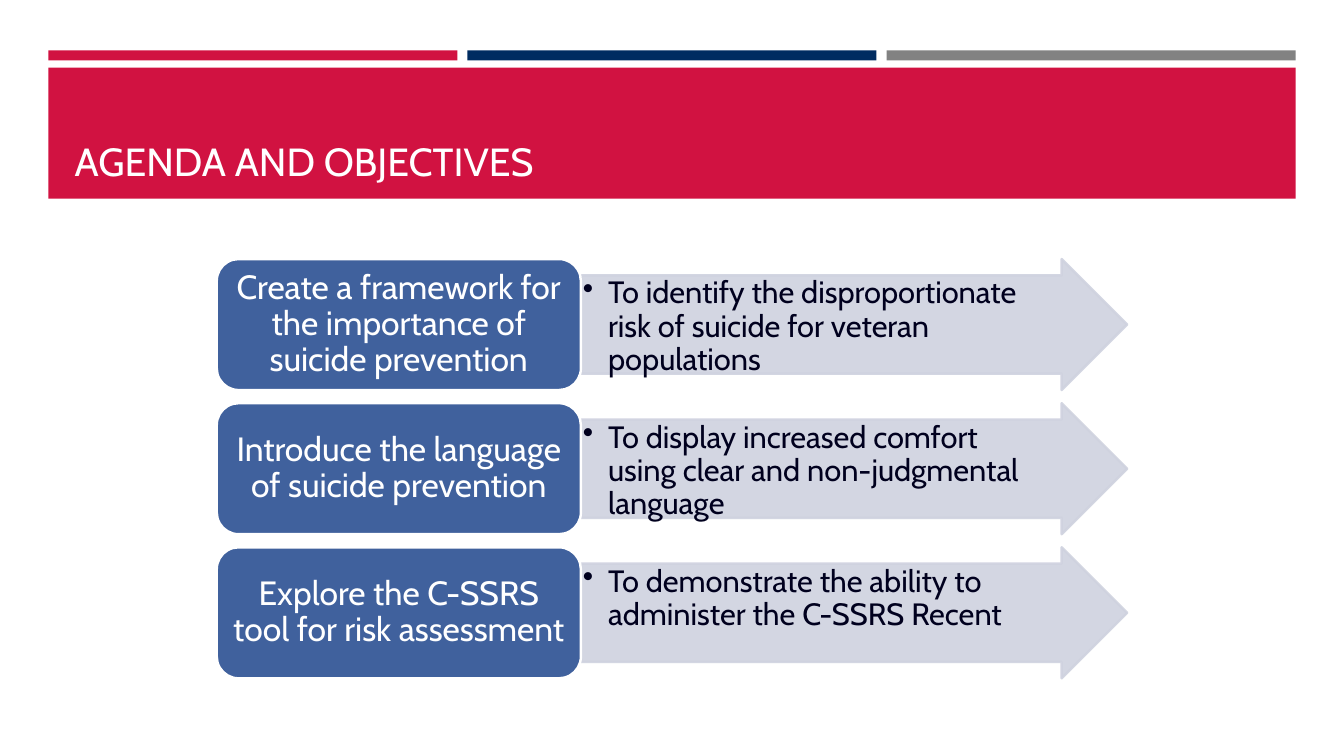
import pptx
import pptx.util
import pptx.dml.color
import pptx.enum.shapes
import pptx.enum.text
import pptx.oxml
import pptx.oxml.ns

Inches = pptx.util.Inches
SHAPE = pptx.enum.shapes.MSO_SHAPE
ANCHOR = pptx.enum.text.MSO_ANCHOR
ALIGN = pptx.enum.text.PP_ALIGN
RED, NAVY, GRAY = "D11241", "002C61", "828282"
WHITE, BLUE, PALE, INK = "FFFFFF", "40619D", "CFD2DF", "00001E"
AGENDA = [
    ("Create a framework for the importance of suicide prevention",
     "To identify the disproportionate risk of suicide for veteran populations"),
    ("Introduce the language of suicide prevention",
     "To display increased comfort using clear and non-judgmental language"),
    ("Explore the C-SSRS tool for risk assessment",
     "To demonstrate the ability to administer the C-SSRS Recent"),
]


def color(value):
    """Turn a hex string into a colour."""
    return pptx.dml.color.RGBColor.from_string(value)


def element(tag, **attributes):
    """Make a DrawingML element."""
    node = pptx.oxml.parse_xml(f"<a:{tag} {pptx.oxml.ns.nsdecls('a')}/>")
    for name, value in attributes.items():
        node.set(name, value)
    return node


def add_block(page, kind, left, top, width, height, fill, line=None):
    """Add a filled preset shape, outlined when a line colour is given."""
    shape = page.shapes.add_shape(
        kind, Inches(left), Inches(top), Inches(width), Inches(height))
    shape.shadow.inherit = False
    shape.fill.solid()
    shape.fill.fore_color.rgb = color(fill)
    if line:
        shape.line.color.rgb = color(line)
        shape.line.width = pptx.util.Pt(1.75)
    else:
        shape.line.fill.background()
    return shape


def write(shape, text, size, ink, anchor, align):
    """Put one formatted paragraph into a shape and return it."""
    frame = shape.text_frame
    frame.text = text
    frame.word_wrap = True
    frame.vertical_anchor = anchor
    para = frame.paragraphs[0]
    para.alignment = align
    for span in para.runs:
        span.font.name = "Cabin"
        span.font.size = pptx.util.Pt(size)
        span.font.color.rgb = color(ink)
    return para


def add_header(page, left, top, width):
    """Draw the three bars, the red band and the title on it."""
    gap = 0.1
    bar = (width - 2 * gap) / 3
    for index, fill in enumerate((RED, NAVY, GRAY)):
        add_block(page, SHAPE.RECTANGLE, left + index * (bar + gap), top,
                  bar, 0.1, fill)
    add_block(page, SHAPE.RECTANGLE, left, top + 0.17, width, 1.3, RED)
    title = page.shapes.title
    title.left, title.top = Inches(left + 0.16), Inches(top + 0.27)
    title.width, title.height = Inches(12.06), Inches(1.11)
    write(title, "AGENDA AND OBJECTIVES", 28, WHITE, ANCHOR.BOTTOM, ALIGN.LEFT)
    title.element.getparent().append(title.element)


def add_objective(page, left, top, width, height, text):
    """Draw a translucent arrow holding one bulleted objective."""
    arrow = add_block(page, SHAPE.RIGHT_ARROW, left, top, width, height, PALE, PALE)
    arrow.adjustments[0] = 0.75
    arrow.adjustments[1] = 0.5
    for tint in arrow.element.spPr.iter(pptx.oxml.ns.qn("a:srgbClr")):
        tint.append(element("alpha", val="90000"))
    para = write(arrow, text, 22, INK, ANCHOR.TOP, ALIGN.LEFT)
    para.line_spacing = 0.9
    frame = arrow.text_frame
    frame.margin_left = frame.margin_top = frame.margin_bottom = Inches(0.02)
    frame.margin_right = Inches(0.35)
    properties = para.runs[0].font and para.alignment is not None and para._p.get_or_add_pPr()
    properties.set("marL", str(Inches(0.25)))
    properties.set("indent", str(Inches(-0.25)))
    properties.append(element("buChar", char="•"))


def add_agenda(page, left, top, width, height):
    """Stack the agenda rows, each a label followed by its arrow."""
    pitch = 1.43
    row = height - pitch * (len(AGENDA) - 1)
    label_width = width * 0.4
    for index, (topic, objective) in enumerate(AGENDA):
        row_top = top + index * pitch
        add_objective(page, left + label_width, row_top, width - label_width,
                      row, objective)
        label = add_block(page, SHAPE.ROUNDED_RECTANGLE, left, row_top,
                          label_width, row, BLUE, WHITE)
        para = write(label, topic, 24, WHITE, ANCHOR.MIDDLE, ALIGN.CENTER)
        para.line_spacing = 0.9


def main():
    """Build the slide and save it."""
    deck = pptx.Presentation()
    deck.slide_width, deck.slide_height = Inches(13.33), Inches(7.5)
    page = deck.slides.add_slide(deck.slide_layouts[5])
    add_header(page, 0.48, 0.5, 12.37)
    add_agenda(page, 2.15, 2.57, 9.03, 4.16)
    deck.save("out.pptx")


if __name__ == "__main__":
    main()
